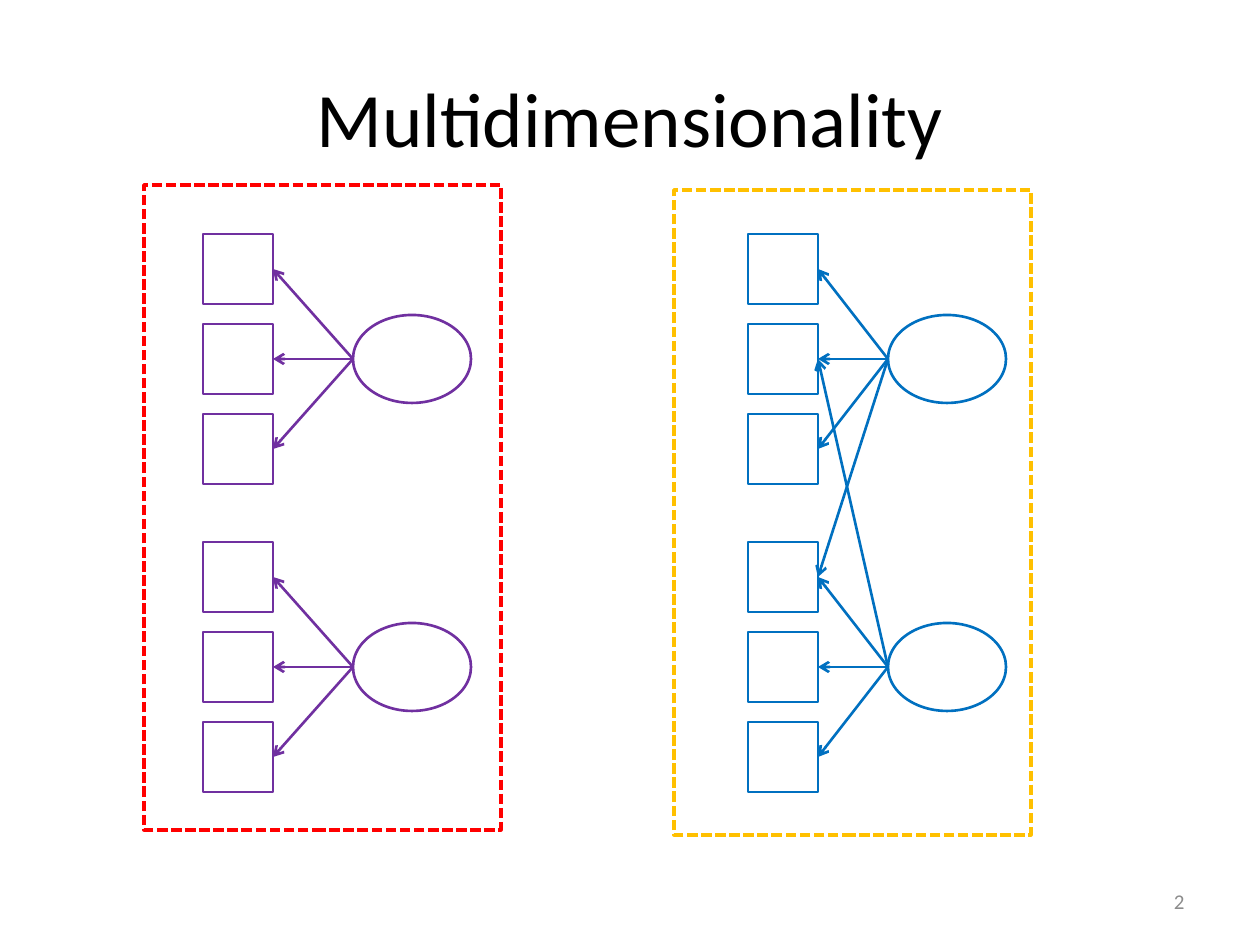
from lxml.etree import SubElement
from pptx import Presentation
from pptx.dml.color import RGBColor
from pptx.enum.dml import MSO_LINE
from pptx.enum.shapes import MSO_CONNECTOR, MSO_SHAPE
from pptx.enum.text import MSO_ANCHOR, PP_ALIGN
from pptx.oxml.ns import qn
from pptx.util import Pt

PX = 914400 / 126
COLORS = {
    "black": "000000",
    "grey": "8C8C8C",
    "purple": "7030A0",
    "blue": "0070C0",
    "red": "FF0000",
    "amber": "FFC000",
}
INDICATOR = 70
STEP = 90
FACTOR_WIDTH, FACTOR_HEIGHT = 118, 88
FACTOR_TOPS = [234, 542]


def add_text(text, box, size, color, align):
    shape = slide.shapes.add_textbox(*[round(value * PX) for value in box])
    frame = shape.text_frame
    frame.word_wrap = True
    frame.vertical_anchor = MSO_ANCHOR.MIDDLE
    paragraph = frame.paragraphs[0]
    paragraph.alignment = align
    run = paragraph.add_run()
    run.text = text
    run.font.name = "Calibri"
    run.font.size = Pt(size)
    run.font.color.rgb = RGBColor.from_string(COLORS[color])


def add_outline(shapes, kind, box, color, width=1.5):
    shape = shapes.add_shape(kind, *[round(value * PX) for value in box])
    shape.shadow.inherit = False
    shape.fill.background()
    shape.line.color.rgb = RGBColor.from_string(COLORS[color])
    shape.line.width = Pt(width)
    return shape


presentation = Presentation()
presentation.slide_width = round(1260 * PX)
presentation.slide_height = round(945 * PX)
slide = presentation.slides.add_slide(presentation.slide_layouts[6])

add_text("Multidimensionality", box=(63, 38, 1134, 157), size=44,
         color="black", align=PP_ALIGN.CENTER)

own_loadings = [(0, 0), (0, 1), (0, 2), (1, 3), (1, 4), (1, 5)]
cross_loadings = [(0, 3), (1, 1)]
models = [
    (203, 353, "purple", own_loadings),
    (748, 888, "blue", own_loadings + cross_loadings),
]
for indicator_left, factor_left, color, loadings in models:
    shapes = slide.shapes.add_group_shape().shapes
    indicators = []
    factors = []
    for top in FACTOR_TOPS:
        for row in range(3):
            box = (indicator_left, top + row * STEP, INDICATOR, INDICATOR)
            indicators.append(add_outline(shapes, MSO_SHAPE.RECTANGLE, box, color))
        middle = top + STEP + INDICATOR // 2
        box = (factor_left, middle - FACTOR_HEIGHT // 2, FACTOR_WIDTH, FACTOR_HEIGHT)
        factors.append(add_outline(shapes, MSO_SHAPE.OVAL, box, color))
    for factor_index, indicator_index in loadings:
        factor = factors[factor_index]
        indicator = indicators[indicator_index]
        start_y = factor.top + factor.height // 2
        arrow = shapes.add_connector(MSO_CONNECTOR.STRAIGHT, factor.left, start_y,
                                     indicator.left + indicator.width, start_y)
        arrow.end_connect(indicator, 3)
        arrow.line.color.rgb = RGBColor.from_string(COLORS[color])
        arrow.line.width = Pt(1.5)
        SubElement(arrow.line._get_or_add_ln(), qn("a:tailEnd"), type="arrow")
        SubElement(arrow._element.spPr, qn("a:effectLst"))

for left, top, color in [(144, 185, "red"), (674, 190, "amber")]:
    border = add_outline(slide.shapes, MSO_SHAPE.RECTANGLE, (left, top, 357, 645), color, width=2)
    border.line.dash_style = MSO_LINE.SQUARE_DOT

add_text("2", box=(903, 876, 294, 50), size=12, color="grey", align=PP_ALIGN.RIGHT)

presentation.save("out.pptx")
